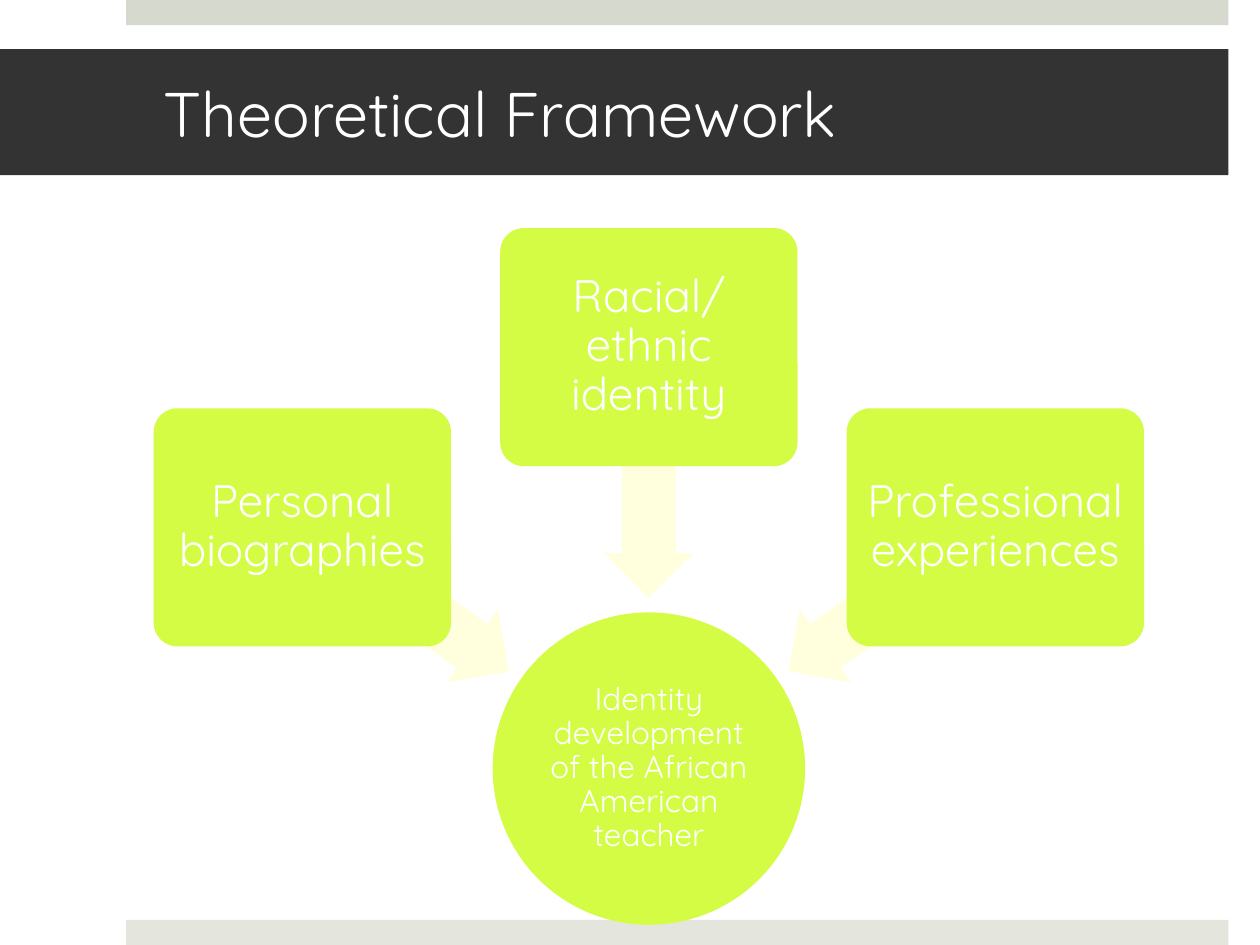
from pptx import Presentation
from pptx.dml.color import RGBColor
from pptx.enum.shapes import MSO_SHAPE
from pptx.enum.text import MSO_ANCHOR, MSO_AUTO_SIZE, PP_ALIGN
from pptx.util import Inches, Pt

RECT = MSO_SHAPE.RECTANGLE
ROUND = MSO_SHAPE.ROUNDED_RECTANGLE
OVAL = MSO_SHAPE.OVAL
ARROW = MSO_SHAPE.LEFT_ARROW
MIDDLE = MSO_ANCHOR.MIDDLE
LEFT, CENTER = PP_ALIGN.LEFT, PP_ALIGN.CENTER
NO_FIT = MSO_AUTO_SIZE.NONE

FONT = "Quicksand"
WHITE, DARK = "FFFFFF", "333333"
LIME, CREAM = "D4FC45", "FFFFDD"
BAND_TOP, BAND_BOTTOM = "D6D9CD", "E4E6DE"

CARD_W, CARD_H = 2.36, 1.89
CARD_LEFT, CARD_STEP = 1.22, 2.75
ARROW_W, ARROW_H = 2, 0.71
CARDS = [
    ("Personal biographies", 3.24, 215, (3.22, 4.755)),
    ("Racial/ethnic identity", 1.81, 270, (5.15, 3.745)),
    ("Professional experiences", 3.24, 325, (7.08, 4.755)),
]


def rgb(value):
    return RGBColor.from_string(value)


def add_text(sp, text, size=26, align=CENTER, spacing=0.9, insets=(0.05,) * 4):
    tf = sp.text_frame
    tf.word_wrap = True
    tf.auto_size = NO_FIT
    tf.vertical_anchor = MIDDLE
    tf.margin_left, tf.margin_top, tf.margin_right, tf.margin_bottom = map(Inches, insets)
    p = tf.paragraphs[0]
    p.alignment = align
    p.line_spacing = spacing
    r = p.add_run()
    r.text = text
    r.font.name = FONT
    r.font.size = Pt(size)
    r.font.color.rgb = rgb(WHITE)


def paint(sp, color):
    sp.fill.solid()
    sp.fill.fore_color.rgb = rgb(color)
    sp.line.fill.background()


def add_block(slide, kind, box, color, adjust=()):
    sp = slide.shapes.add_shape(kind, *map(Inches, box))
    sp.shadow.inherit = False
    paint(sp, color)
    for i, value in enumerate(adjust):
        sp.adjustments[i] = value
    return sp


def add_title(slide, text):
    sp = slide.shapes.title
    sp.left, sp.top, sp.width, sp.height = map(Inches, (0, 0.39, 9.75, 1))
    paint(sp, DARK)
    add_text(sp, text, size=36, align=LEFT, spacing=1, insets=(1.3, 0.05, 0.3, 0.05))


def add_arrow(slide, center, angle):
    x, y = center
    box = (x - ARROW_W / 2, y - ARROW_H / 2, ARROW_W, ARROW_H)
    sp = add_block(slide, ARROW, box, CREAM, (0.6, 0.5))
    sp.rotation = angle


def add_card(slide, column, top, text):
    box = (CARD_LEFT + column * CARD_STEP, top, CARD_W, CARD_H)
    sp = add_block(slide, ROUND, box, LIME, (0.1,))
    add_text(sp, text)


def main():
    prs = Presentation()
    prs.slide_width, prs.slide_height = Inches(10), Inches(7.5)
    slide = prs.slides.add_slide(prs.slide_layouts[5])
    for top, color in ((0, BAND_TOP), (7.3, BAND_BOTTOM)):
        add_block(slide, RECT, (1, top, 8.75, 0.2), color)
    add_title(slide, "Theoretical Framework")
    hub = add_block(slide, OVAL, (3.91, 4.86, 2.48, 2.48), LIME)
    add_text(hub, "Identity development of the African American teacher",
             size=18, insets=(0.01,) * 4)
    for column, (text, top, angle, center) in enumerate(CARDS):
        add_arrow(slide, center, angle)
        add_card(slide, column, top, text)
    prs.save("out.pptx")


if __name__ == "__main__":
    main()
